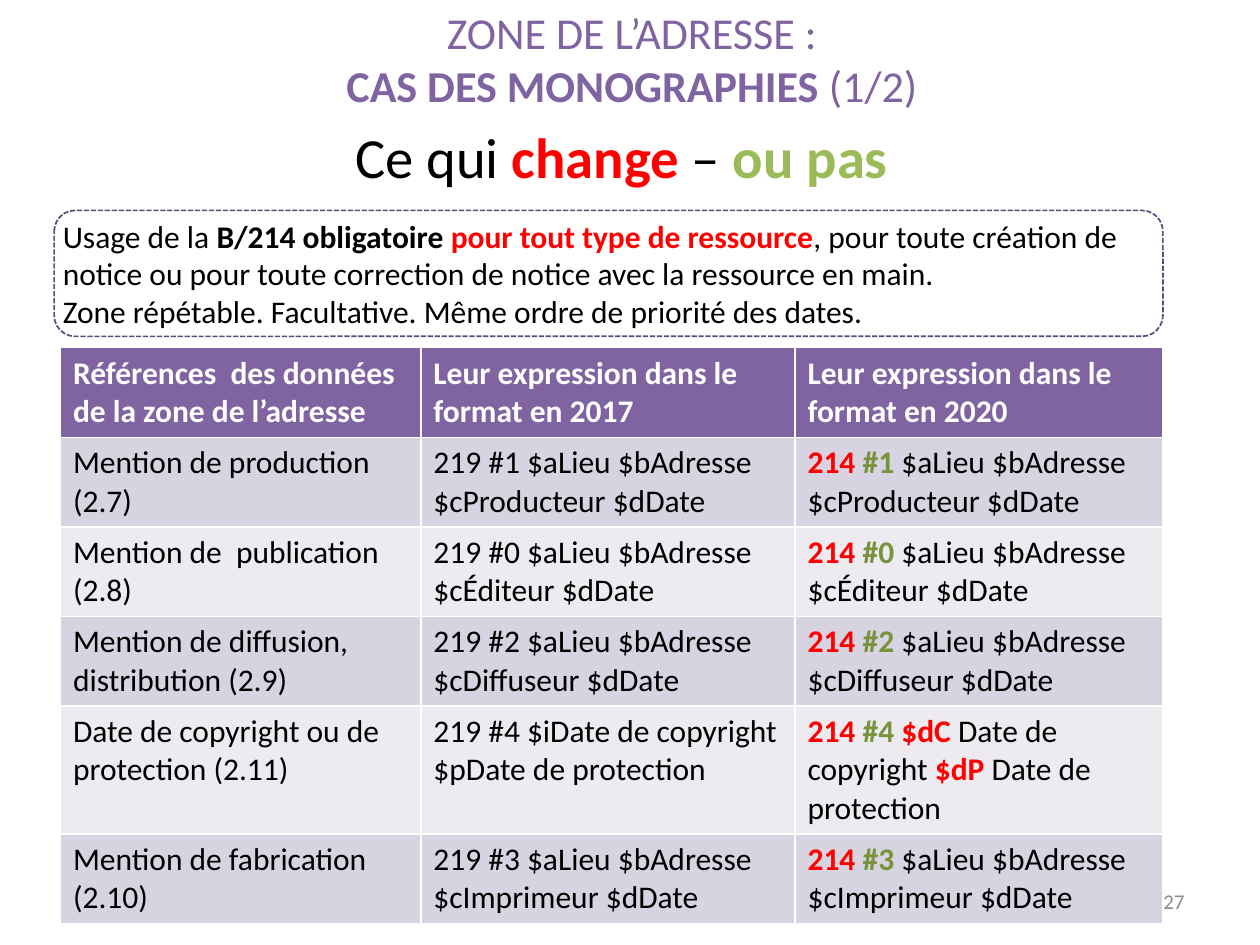
from copy import deepcopy

from pptx import Presentation
from pptx.dml.color import RGBColor
from pptx.enum.dml import MSO_LINE
from pptx.enum.shapes import MSO_SHAPE
from pptx.enum.text import MSO_ANCHOR, PP_ALIGN
from pptx.util import Inches, Pt

FONT = "Calibri"
PURPLE = RGBColor(0x80, 0x64, 0xA2)
DARK_PURPLE = RGBColor(0x60, 0x4A, 0x7B)
BAND_DARK = RGBColor(0xD8, 0xD3, 0xE0)
BAND_LIGHT = RGBColor(0xED, 0xEA, 0xF0)
RED = RGBColor(0xFF, 0x00, 0x00)
GREEN = RGBColor(0x9B, 0xBB, 0x59)
DARK_GREEN = RGBColor(0x77, 0x93, 0x3C)
GREY = RGBColor(0x8C, 0x8C, 0x8C)
BLACK = RGBColor(0x00, 0x00, 0x00)
WHITE = RGBColor(0xFF, 0xFF, 0xFF)

HEADINGS = [
    "Références  des données de la zone de l’adresse",
    "Leur expression dans le format en 2017",
    "Leur expression dans le format en 2020",
]
COPYRIGHT_2020 = [
    ("$dC ", RED, True), ("Date de copyright ", BLACK, False),
    ("$dP ", RED, True), ("Date de protection", BLACK, False),
]


def address(agent):
    return f"$aLieu $bAdresse $c{agent} $dDate"


def unchanged(agent):
    return address(agent), [(address(agent), BLACK, False)]


MENTIONS = [
    ("Mention de production (2.7)", "#1", *unchanged("Producteur")),
    ("Mention de  publication (2.8)", "#0", *unchanged("Éditeur")),
    ("Mention de diffusion, distribution (2.9)", "#2", *unchanged("Diffuseur")),
    ("Date de copyright ou de protection (2.11)", "#4",
     "$iDate de copyright $pDate de protection", COPYRIGHT_2020),
    ("Mention de fabrication (2.10)", "#3", *unchanged("Imprimeur")),
]


def write(paragraph, pieces, size):
    for text, color, bold in pieces:
        run = paragraph.add_run()
        run.text = text
        run.font.name = FONT
        run.font.size = Pt(size)
        run.font.bold = bold
        run.font.color.rgb = color


def add_text(slide, box, anchor=MSO_ANCHOR.TOP):
    frame = slide.shapes.add_textbox(*box).text_frame
    frame.word_wrap = True
    frame.vertical_anchor = anchor
    return frame


def fill_title(slide, box):
    title = slide.shapes.title
    title.left, title.top, title.width, title.height = box
    title.text_frame.vertical_anchor = MSO_ANCHOR.MIDDLE
    heading = title.text_frame.paragraphs[0]
    heading.alignment = PP_ALIGN.CENTER
    write(heading, [("ZONE DE L’ADRESSE :", PURPLE, False)], 25.2)
    heading.add_line_break()
    line_break = heading._p[-1]
    line_break.append(deepcopy(heading.runs[0]._r.rPr))
    write(heading, [("CAS DES MONOGRAPHIES ", PURPLE, True),
                    ("(1/2)", PURPLE, False)], 25.2)


def add_subtitle(slide, box):
    subtitle = add_text(slide, box, MSO_ANCHOR.MIDDLE)
    write(subtitle.paragraphs[0], [
        ("Ce qui ", BLACK, False), ("change", RED, True),
        (" – ", BLACK, False), ("ou pas", GREEN, True),
    ], 32.4)


def add_usage(slide, box):
    usage = add_text(slide, box)
    write(usage.paragraphs[0], [
        ("Usage de la ", BLACK, False),
        ("B/214 obligatoire ", BLACK, True),
        ("pour tout type de ressource", RED, True),
        (", pour toute création de notice ou pour toute correction de notice "
         "avec la ressource en main.", BLACK, False),
    ], 18)
    write(usage.add_paragraph(), [
        ("Zone répétable. Facultative. Même ordre de priorité des dates.", BLACK, False),
    ], 18)


def add_usage_frame(slide, box):
    frame = slide.shapes.add_shape(MSO_SHAPE.ROUNDED_RECTANGLE, *box)
    frame.shadow.inherit = False
    frame.fill.background()
    frame.line.color.rgb = DARK_PURPLE
    frame.line.width = Pt(1)
    frame.line.dash_style = MSO_LINE.SQUARE_DOT


def add_mentions(slide, box):
    rows = [[[(heading, WHITE, True)] for heading in HEADINGS]]
    for mention, indicator, before, after in MENTIONS:
        rows.append([
            [(mention, BLACK, False)],
            [(f"219 {indicator} {before}", BLACK, False)],
            [("214 ", RED, True), (f"{indicator} ", DARK_GREEN, True), *after],
        ])
    table = slide.shapes.add_table(len(rows), len(HEADINGS), *box).table
    for column, width in zip(table.columns, (2.86, 2.97, 2.92)):
        column.width = Inches(width)
    for row, height in zip(table.rows, (0.7, 0.7, 0.7, 0.7, 1, 0.7)):
        row.height = Inches(height)
    for r, row in enumerate(rows):
        band = PURPLE if r == 0 else BAND_DARK if r % 2 else BAND_LIGHT
        for c, pieces in enumerate(row):
            cell = table.cell(r, c)
            cell.fill.solid()
            cell.fill.fore_color.rgb = band
            write(cell.text_frame.paragraphs[0], pieces, 18)


def add_page_number(slide, box):
    number = add_text(slide, box, MSO_ANCHOR.MIDDLE).paragraphs[0]
    number.alignment = PP_ALIGN.RIGHT
    write(number, [("27", GREY, False)], 12)


def inches(*lengths):
    return [Inches(length) for length in lengths]


def main():
    deck = Presentation()
    deck.slide_width, deck.slide_height = inches(10, 7.5)
    slide = deck.slides.add_slide(deck.slide_layouts[5])
    fill_title(slide, inches(0.44, -0.04, 9.15, 1.01))
    add_mentions(slide, inches(0.48, 2.76, 8.75, 4.5))
    add_usage(slide, inches(0.4, 1.67, 8.83, 1.01))
    add_page_number(slide, inches(7.17, 6.95, 2.33, 0.4))
    add_subtitle(slide, inches(2.72, 0.8, 4.6, 0.87))
    add_usage_frame(slide, inches(0.43, 1.67, 8.8, 1))
    deck.save("out.pptx")


if __name__ == "__main__":
    main()
